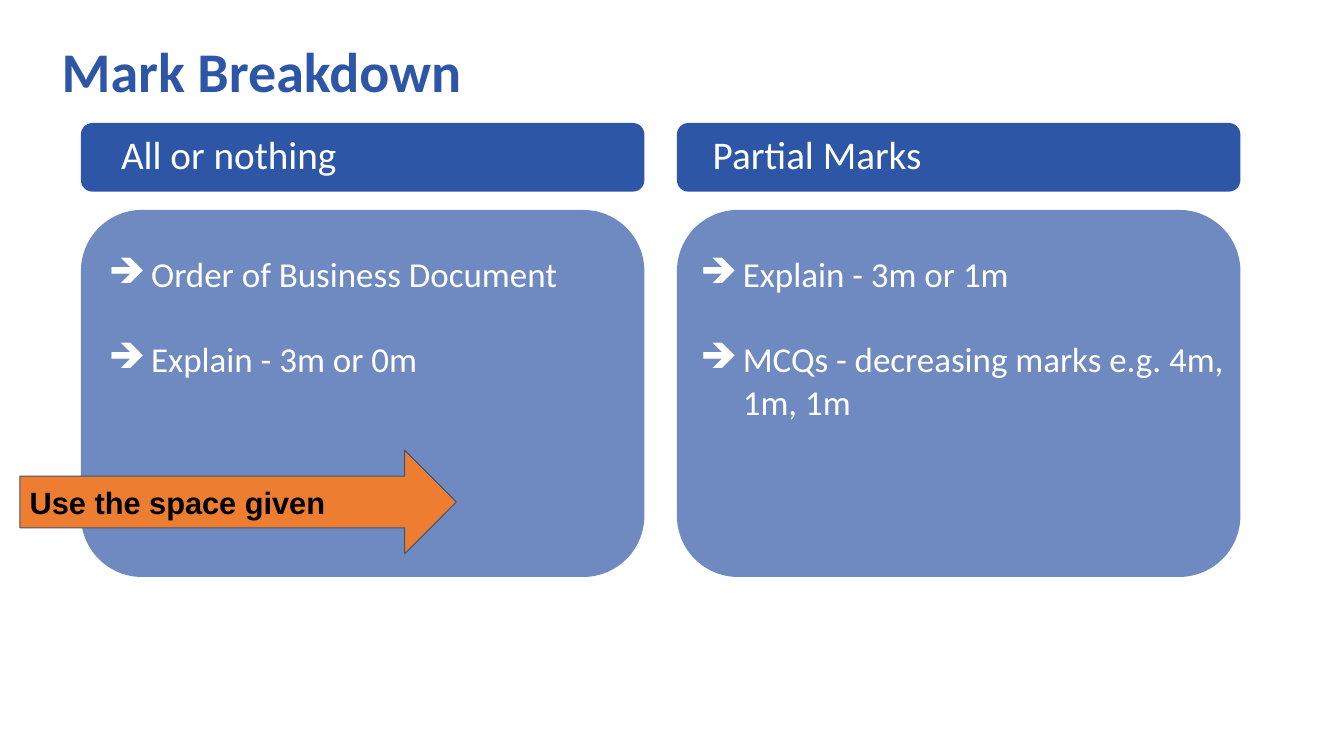
from lxml.etree import SubElement
from pptx import Presentation
from pptx.dml.color import RGBColor
from pptx.enum.shapes import MSO_SHAPE as Preset
from pptx.enum.text import MSO_ANCHOR as Anchor, PP_ALIGN as Align
from pptx.oxml.ns import qn
from pptx.util import Cm, Pt

COLORS = {"blue": "2E56A6", "white": "FFFFFF", "orange": "ED7D31",
          "slate": "44546A", "black": "000000"}
COLUMNS = {
    "All or nothing": ["Order of Business Document", "Explain - 3m or 0m"],
    "Partial Marks": ["Explain - 3m or 1m",
                      "MCQs - decreasing marks e.g. 4m, 1m, 1m"],
}


def add_filled_shape(preset, left, top, width, height, color):
    shape = slide.shapes.add_shape(preset, Cm(left), Cm(top), Cm(width), Cm(height))
    shape.shadow.inherit = False
    shape.fill.solid()
    shape.fill.fore_color.rgb = RGBColor.from_string(COLORS[color])
    shape.line.fill.background()
    return shape


def style_text(paragraph, size, color, name="Calibri", bold=False):
    paragraph.alignment = Align.LEFT
    for run in paragraph.runs:
        run.font.size = Pt(size)
        run.font.name = name
        run.font.bold = bold
        run.font.color.rgb = RGBColor.from_string(COLORS[color])


presentation = Presentation()
presentation.slide_width, presentation.slide_height = Cm(33.87), Cm(19.05)
slide = presentation.slides.add_slide(presentation.slide_layouts[5])

# Title
title = slide.shapes.title
title.left, title.top, title.width, title.height = Cm(1.3), Cm(1.02), Cm(29.2), Cm(1.73)
title.text_frame.text = "Mark Breakdown"
title.text_frame.vertical_anchor = Anchor.MIDDLE
title.text_frame.paragraphs[0].line_spacing = 0.9
style_text(title.text_frame.paragraphs[0], 40, "blue", bold=True)

# Header bars and translucent panels
for left in (2.04, 17.06):
    panel = add_filled_shape(Preset.ROUNDED_RECTANGLE, left, 5.29, 14.2, 9.25, "blue")
    panel_color = panel.fill._xPr.find(qn("a:solidFill"))[0]
    SubElement(panel_color, qn("a:alpha"), val="69000")
    add_filled_shape(Preset.ROUNDED_RECTANGLE, left, 3.1, 14.2, 1.73, "blue")

# Transparent table over the panels
row_heights = [2.11, 0.96, 4.57] + [1.63] * 4
column_widths = [14.91, 14.3]
table = slide.shapes.add_table(
    len(row_heights), len(column_widths), Cm(2.34), Cm(3.2),
    Cm(sum(column_widths)), Cm(sum(row_heights))).table
table.first_row = table.horz_banding = False
for row, height in zip(table.rows, row_heights):
    row.height = Cm(height)
for column, width in zip(table.columns, column_widths):
    column.width = Cm(width)
for cell in table.iter_cells():
    cell.margin_left = cell.margin_right = Cm(0.2)
    properties = cell._tc.get_or_add_tcPr()
    for side in ("a:lnL", "a:lnR", "a:lnT", "a:lnB"):
        SubElement(SubElement(properties, qn(side), w="0"), qn("a:noFill"))
    cell.fill.background()
for cell in table.rows[1].cells:
    cell.margin_top = cell.margin_bottom = 0

# Table headings and bullets
for index, (heading, items) in enumerate(COLUMNS.items()):
    heading_cell = table.cell(0, index)
    heading_cell.text_frame.text = heading
    paragraph = heading_cell.text_frame.paragraphs[0]
    paragraph._p.get_or_add_pPr().set("marL", str(Cm(0.51)))
    style_text(paragraph, 28, "white")

    text_frame = table.cell(2, index).text_frame
    text_frame.text = "\n".join(items)
    for number, paragraph in enumerate(text_frame.paragraphs):
        properties = paragraph._p.get_or_add_pPr()
        properties.set("marL", str(Cm(1.27)))
        properties.set("indent", str(Cm(-1.07)))
        bullet_color = SubElement(properties, qn("a:buClr"))
        SubElement(bullet_color, qn("a:srgbClr"), val=COLORS["white"])
        SubElement(properties, qn("a:buChar"), char="➔")
        if number:
            paragraph.space_before = Pt(30.5)
        style_text(paragraph, 25, "white")

# Arrow callout
arrow = add_filled_shape(Preset.RIGHT_ARROW, 0.5, 11.35, 11, 2.6, "orange")
arrow.line.color.rgb = RGBColor.from_string(COLORS["slate"])
arrow.line.width = Pt(0.75)
text_frame = arrow.text_frame
text_frame.text = "Use the space given"
text_frame.vertical_anchor = Anchor.MIDDLE
text_frame.margin_left = text_frame.margin_right = Cm(0.25)
text_frame.margin_top = text_frame.margin_bottom = Cm(0.25)
style_text(text_frame.paragraphs[0], 22, "black", "Arial", bold=True)

presentation.save("out.pptx")
